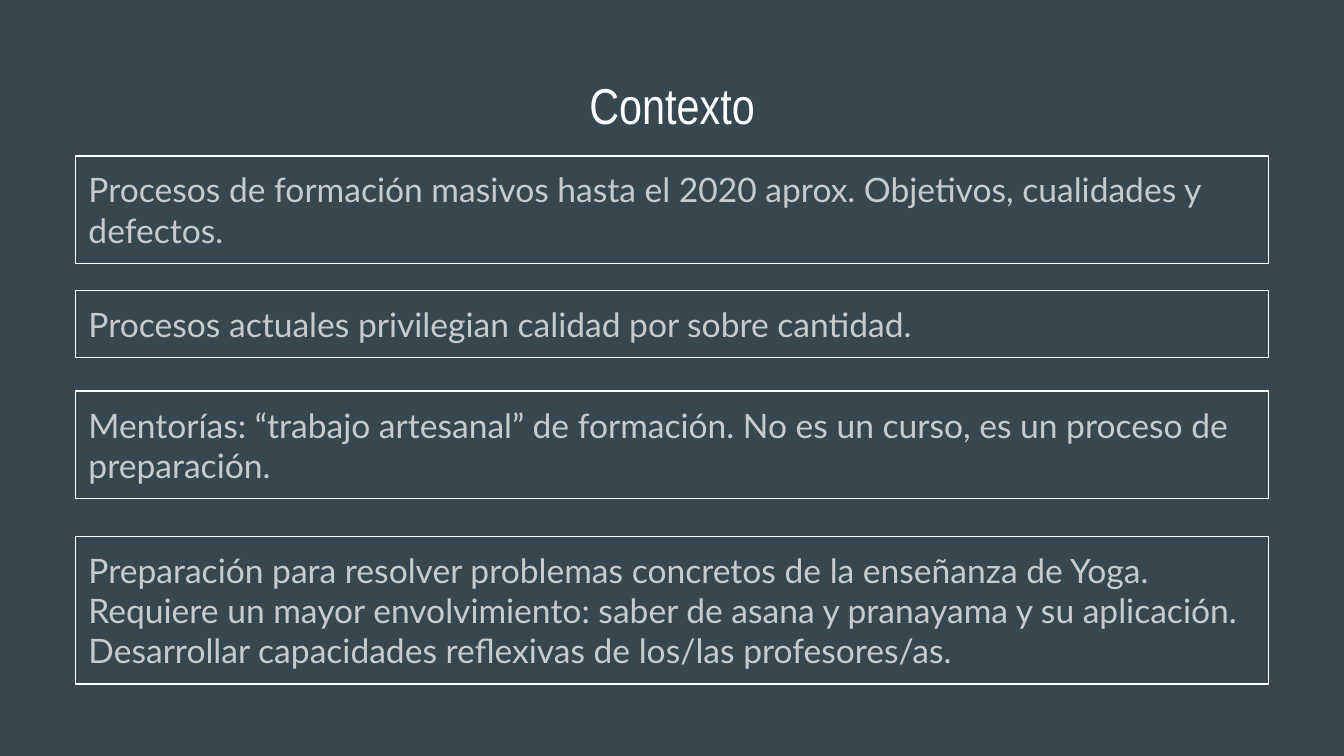
import pptx
import pptx.dml.color
import pptx.enum.shapes
import pptx.enum.text
import pptx.util

WIDTH = 10
HEIGHT = WIDTH * 9 / 16
SLATE, WHITE, GREY = "37474F", "FFFFFF", "CACACA"
TITLE_MARGIN, MARGIN, INSET, LINE_HEIGHT = 0.34, 0.56, 0.1, 0.3

heading = "Contexto"
statements = [
    (1.16, 2, "Procesos de formación masivos hasta el 2020 aprox. "
              "Objetivos, cualidades y defectos."),
    (2.16, 1, "Procesos actuales privilegian calidad por sobre cantidad."),
    (2.91, 2, "Mentorías: “trabajo artesanal” de formación. "
              "No es un curso, es un proceso de preparación."),
    (3.99, 3, "Preparación para resolver problemas concretos de la enseñanza de Yoga. "
              "Requiere un mayor envolvimiento: saber de asana y pranayama y su aplicación. "
              "Desarrollar capacidades reflexivas de los/las profesores/as."),
]


def color(value):
    return pptx.dml.color.RGBColor.from_string(value)


def box(margin, top, height):
    return [pptx.util.Inches(length)
            for length in (margin, top, WIDTH - 2 * margin, height)]


def write(shape, words, font, size, ink, align):
    frame = shape.text_frame
    frame.word_wrap = True
    frame.vertical_anchor = pptx.enum.text.MSO_ANCHOR.TOP
    frame.margin_left = frame.margin_right = pptx.util.Inches(INSET)
    frame.margin_top = frame.margin_bottom = pptx.util.Inches(INSET)
    paragraph = frame.paragraphs[0]
    paragraph.alignment = align
    run = paragraph.add_run()
    run.text = words
    run.font.name = font
    run.font.size = pptx.util.Pt(size)
    run.font.color.rgb = color(ink)


deck = pptx.Presentation()
deck.slide_width = pptx.util.Inches(WIDTH)
deck.slide_height = pptx.util.Inches(HEIGHT)
slide = deck.slides.add_slide(deck.slide_layouts[6])
slide.background.fill.solid()
slide.background.fill.fore_color.rgb = color(SLATE)

title = slide.shapes.add_textbox(*box(TITLE_MARGIN, 0.45, 0.63))
write(title, heading, "Arial Narrow", 27, WHITE, pptx.enum.text.PP_ALIGN.CENTER)

for top, lines, words in statements:
    card = slide.shapes.add_shape(
        pptx.enum.shapes.MSO_SHAPE.RECTANGLE,
        *box(MARGIN, top, 2 * INSET + lines * LINE_HEIGHT))
    card.shadow.inherit = False
    card.fill.solid()
    card.fill.fore_color.rgb = color(SLATE)
    card.line.color.rgb = color(WHITE)
    card.line.width = pptx.util.Pt(0.75)
    write(card, words, "Lato", 18, GREY, pptx.enum.text.PP_ALIGN.LEFT)
    card.text_frame.auto_size = pptx.enum.text.MSO_AUTO_SIZE.SHAPE_TO_FIT_TEXT

deck.save("out.pptx")
